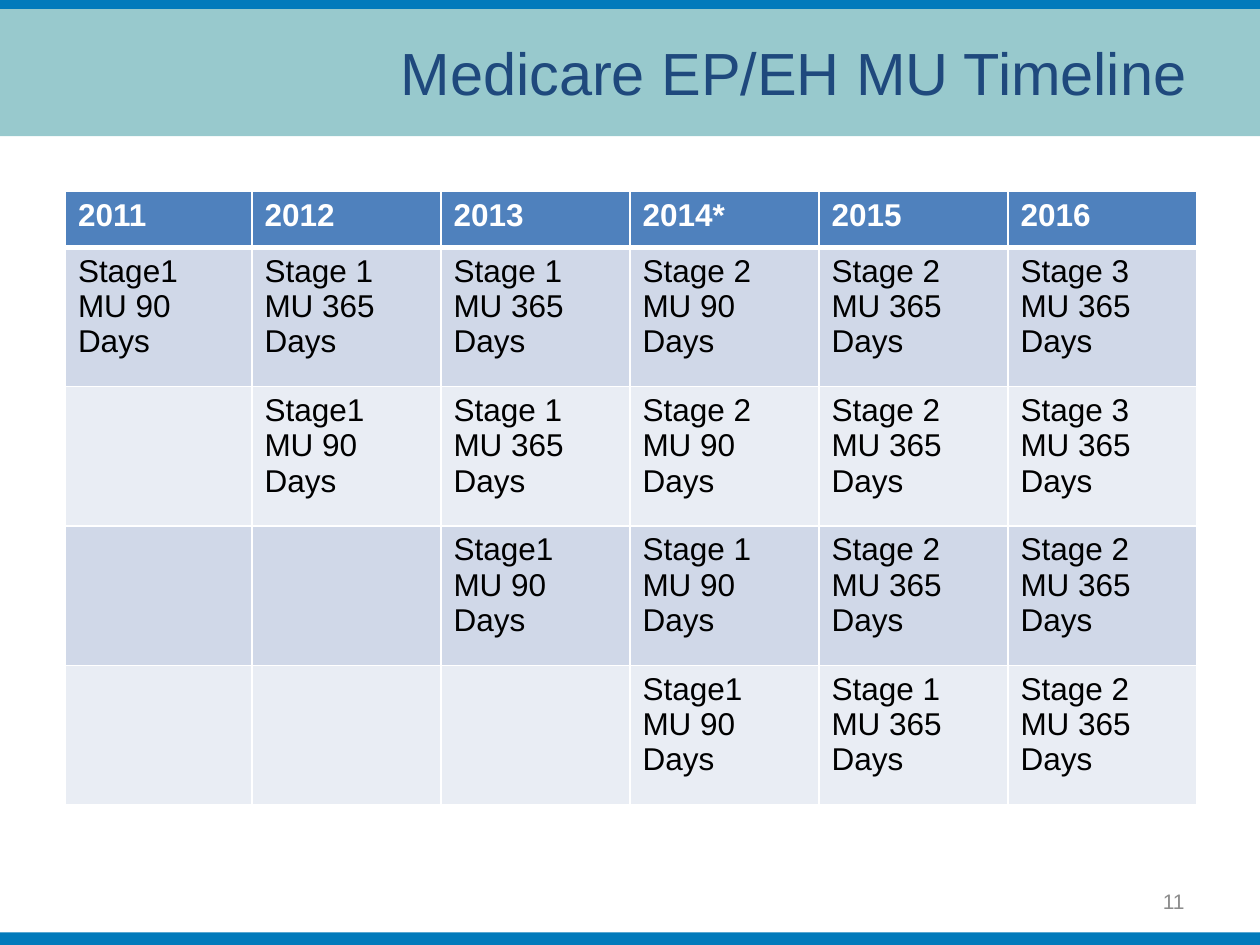
from dataclasses import dataclass
from lxml.etree import SubElement as Sub
from pptx import Presentation
from pptx.dml.color import RGBColor as Rgb
from pptx.enum.shapes import MSO_SHAPE as Form
from pptx.enum.text import MSO_ANCHOR as Anchor, PP_ALIGN as Align
from pptx.oxml.ns import qn
from pptx.util import Pt


@dataclass
class Theme:
    face: str = "Arial"
    blue: str = "027ABB"
    teal: str = "98C9CD"
    navy: str = "1F497D"
    head: str = "4F81BD"
    bands: tuple = ("D0D8E8", "E9EDF4")
    white: str = "FFFFFF"
    black: str = "000000"
    gray: str = "8C8C8C"
    title: int = 34
    body: int = 18
    small: int = 12


theme = Theme()


def style(frame, size, color, bold=False, align=None):
    for para in frame.paragraphs:
        para.alignment = align
        for run in para.runs:
            font = run.font
            font.name, font.size, font.bold = theme.face, Pt(size), bold
            font.color.rgb = Rgb.from_string(color)


def edge(cell, side, width):
    line = Sub(cell._tc.get_or_add_tcPr(), qn("a:" + side), w=str(Pt(width)))
    Sub(Sub(line, qn("a:solidFill")), qn("a:srgbClr"), val=theme.white)


deck = Presentation()
deck.slide_width, deck.slide_height = Pt(720), Pt(540)
slide = deck.slides.add_slide(deck.slide_layouts[6])
shapes = slide.shapes

bars = [(-0.7, 18.7, theme.blue), (5.2, 72.6, theme.teal), (532.8, 7.2, theme.blue)]
for top, high, color in bars:
    bar = shapes.add_shape(Form.RECTANGLE, 0, Pt(top), Pt(720.7), Pt(high))
    bar.shadow.inherit = False
    bar.fill.solid()
    bar.fill.fore_color.rgb = Rgb.from_string(color)
    bar.line.fill.background()

labels = [
    ("Medicare EP/EH MU Timeline", (187.2, 5.2, 532.8, 71.3),
     theme.title, theme.navy, Align.CENTER),
    ("11", (516, 500.5, 168, 28.8), theme.small, theme.gray, Align.RIGHT),
]
for text, place, size, color, align in labels:
    frame = shapes.add_textbox(*map(Pt, place)).text_frame
    frame.word_wrap = True
    frame.vertical_anchor = Anchor.MIDDLE
    frame.text = text
    style(frame, size, color, align=align)

first = "Stage1\nMU 90 Days"
one, two, three = (f"Stage {step}\nMU 365 Days" for step in (1, 2, 3))
rows = [
    ["2011", "2012", "2013", "2014*", "2015", "2016"],
    [first, one, one, "Stage 2\nMU 90\nDays", two, three],
    ["", first, one, "Stage 2\nMU 90 Days", two, three],
    ["", "", first, "Stage 1\nMU 90 Days", two, two],
    ["", "", "", first, one, two],
]
grid = shapes.add_table(5, 6, Pt(37.4), Pt(109.4), Pt(646.6), Pt(350.4)).table
for col, span in enumerate(grid.columns):
    span.width = Pt(108 if col else 106.6)
for row, texts in enumerate(rows):
    top = row == 0
    grid.rows[row].height = Pt(32 if top else 79.6)
    fill = theme.head if top else theme.bands[(row - 1) % 2]
    ink = theme.white if top else theme.black
    for col, text in enumerate(texts):
        cell = grid.cell(row, col)
        edge(cell, "lnL", 1)
        edge(cell, "lnR", 1)
        edge(cell, "lnT", 3 if row == 1 else 1)
        edge(cell, "lnB", 3 if top else 1)
        cell.fill.solid()
        cell.fill.fore_color.rgb = Rgb.from_string(fill)
        cell.text_frame.text = text
        style(cell.text_frame, theme.body, ink, bold=top)

deck.save("out.pptx")
